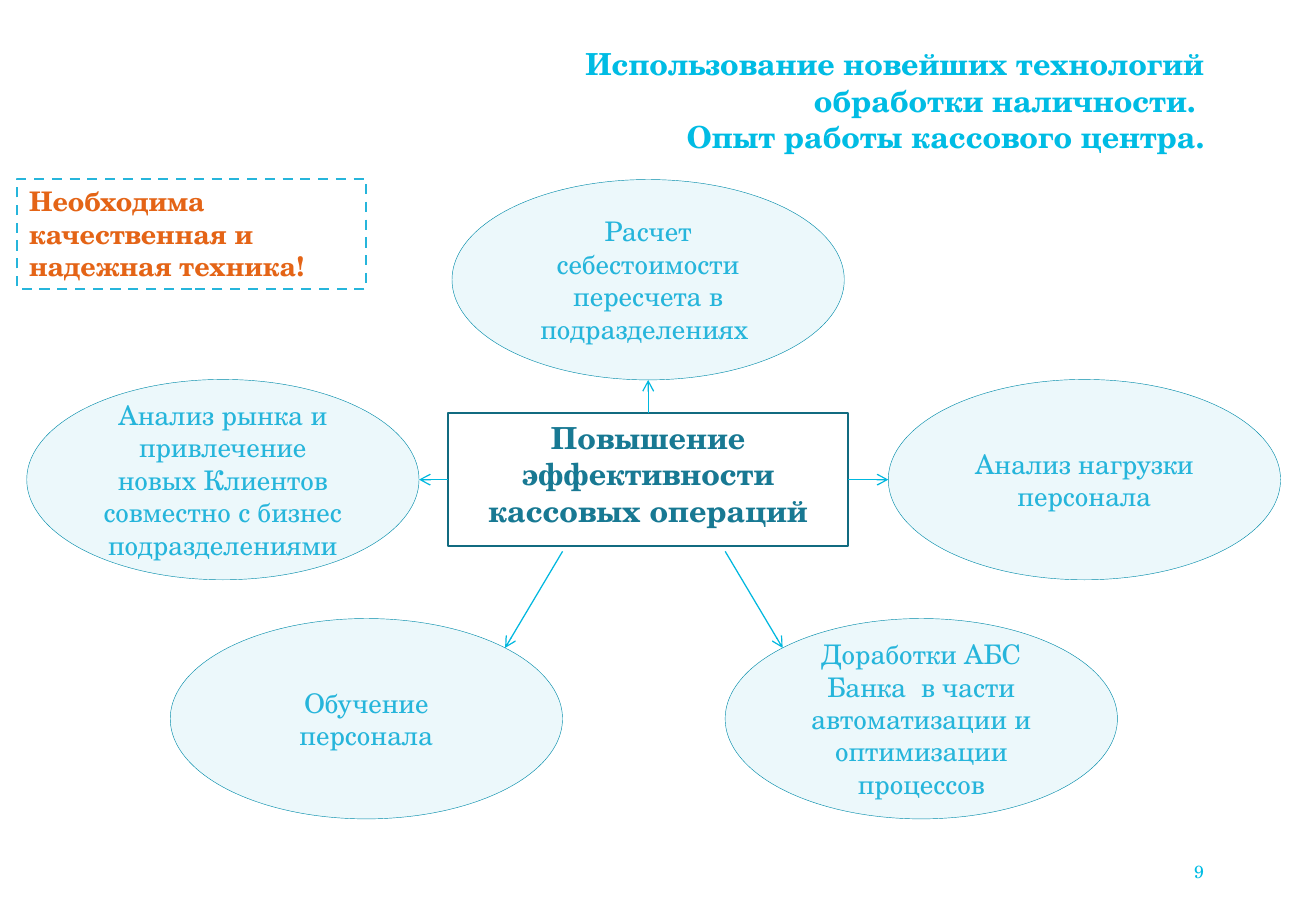
from copy import deepcopy
from dataclasses import dataclass
from math import sqrt

from lxml import etree
from pptx import Presentation
from pptx.dml.color import RGBColor
from pptx.enum.dml import MSO_LINE
from pptx.enum.shapes import MSO_CONNECTOR, MSO_SHAPE
from pptx.enum.text import MSO_ANCHOR, MSO_AUTO_SIZE, PP_ALIGN
from pptx.oxml.ns import qn
from pptx.util import Cm, Pt

LEFT, MID, RIGHT = PP_ALIGN.LEFT, PP_ALIGN.CENTER, PP_ALIGN.RIGHT
TOP, CENTER = MSO_ANCHOR.TOP, MSO_ANCHOR.MIDDLE
OVAL, RECT = MSO_SHAPE.OVAL, MSO_SHAPE.RECTANGLE
STRAIGHT, DASH = MSO_CONNECTOR.STRAIGHT, MSO_LINE.DASH
FIT_NONE = MSO_AUTO_SIZE.NONE

# Content
TITLE = ("Использование новейших технологий обработки наличности. "
         "\vОпыт работы кассового центра.")
HUB = "Повышение эффективности кассовых операций"
NOTE = "Необходима качественная и надежная техника!"
PAGE = "9"
D = sqrt(0.5)
# Text, centre offset from the hub (cm), direction from oval centre to arrow
# tip, side of the hub where the arrow starts (None: below the hub)
NODES = [
    ("Расчет себестоимости пересчета в подразделениях ", (0, -4.18), (0, 1), 0),
    ("Анализ нагрузки персонала", (9.12, 0), (-1, 0), 3),
    ("Доработки АБС Банка  в части автоматизации и оптимизации процессов",
     (5.71, 5), (-D, -D), None),
    ("Обучение персонала", (-5.89, 5), (D, -D), None),
    ("Анализ рынка и привлечение новых Клиентов совместно с бизнес "
     "подразделениями", (-8.89, 0), (1, 0), 1),
]

# Layout in cm
HUB_X, HUB_Y, HUB_W, HUB_H = 13.55, 10.03, 8.36, 2.79
OVAL_W, OVAL_H = 8.2, 4.19
START_Y = 11.53


@dataclass
class Theme:
    font: str = "TeX Gyre Schola"
    title: str = "00BCE4"
    hub: str = "187993"
    frame: str = "116B80"
    node: str = "26B5DB"
    pale: str = "ECF8FB"
    rim: str = "008BA9"
    note: str = "E46416"
    arrow: str = "00B8DF"
    large: float = 18
    body: float = 16
    small: float = 10.5


T = Theme()


def place(shape, x, y, w, h):
    shape.left, shape.top, shape.width, shape.height = map(Cm, (x, y, w, h))


def edge(shape, color, width, dash=None):
    shape.line.color.rgb = RGBColor.from_string(color)
    shape.line.width = Pt(width)
    if dash:
        shape.line.dash_style = dash


def write(shape, text, size=T.body, color=T.node, bold=False, align=MID,
          anchor=CENTER):
    frame = shape.text_frame
    frame.text = text
    frame.word_wrap = True
    frame.auto_size = FIT_NONE
    frame.vertical_anchor = anchor
    para = frame.paragraphs[0]
    props = para._p.get_or_add_pPr()
    props.set("marL", "0")
    props.set("indent", "0")
    etree.SubElement(props, qn("a:buNone"))
    para.alignment = align
    para.space_before = Pt(0)
    for run in para.runs:
        font = run.font
        font.name, font.size, font.bold = T.font, Pt(size), bold
        font.color.rgb = RGBColor.from_string(color)
    # Line breaks take the format of the text around them
    for gap in para._p.findall(qn("a:br")):
        gap.append(deepcopy(para.runs[0]._r.rPr))


def draw_arrow(shapes, start, end, hub, side):
    line = shapes.add_connector(STRAIGHT, *map(Cm, start + end))
    if side is not None:
        line.begin_connect(hub, side)
    edge(line, T.arrow, 0.75)
    etree.SubElement(line.line._get_or_add_ln(), qn("a:tailEnd"), type="arrow")
    etree.SubElement(line._element.spPr, qn("a:effectLst"))


def draw_node(shapes, hub, text, shift, way, side):
    x, y = HUB_X + shift[0], HUB_Y + shift[1]
    oval = shapes.add_shape(OVAL, 0, 0, 0, 0)
    place(oval, x - OVAL_W / 2, y - OVAL_H / 2, OVAL_W, OVAL_H)
    oval.shadow.inherit = False
    oval.fill.solid()
    oval.fill.fore_color.rgb = RGBColor.from_string(T.pale)
    edge(oval, T.rim, 0.25)
    write(oval, text)
    # Slanted arrows start above the inner end of their oval
    inner = OVAL_W / 2 if way[0] > 0 else -OVAL_W / 2
    tip = (x + way[0] * OVAL_W / 2, y + way[1] * OVAL_H / 2)
    draw_arrow(shapes, (x + inner, START_Y), tip, hub, side)


def main():
    deck = Presentation()
    deck.slide_width, deck.slide_height = Cm(27.51), Cm(19.05)
    slide = deck.slides.add_slide(deck.slide_layouts[1])
    shapes = slide.shapes

    # Title
    place(shapes.title, 8.69, 0.89, 16.74, 2.41)
    write(shapes.title, TITLE, size=T.large, color=T.title, bold=True,
          align=RIGHT)

    # Hub
    hub = slide.placeholders[1]
    place(hub, HUB_X - HUB_W / 2, HUB_Y - HUB_H / 2, HUB_W, HUB_H)
    edge(hub, T.frame, 1)
    write(hub, HUB, size=T.large, color=T.hub, bold=True, anchor=TOP)

    # Ovals and arrows
    for node in NODES:
        draw_node(shapes, hub, *node)

    # Dashed note
    note = shapes.add_shape(RECT, 0, 0, 0, 0)
    place(note, 0.36, 3.74, 7.29, 2.31)
    note.shadow.inherit = False
    note.fill.background()
    edge(note, T.node, 1.5, DASH)
    write(note, NOTE, color=T.note, bold=True, align=LEFT, anchor=TOP)

    # Page number
    page = shapes.add_textbox(0, 0, 0, 0)
    place(page, 22.58, 17.91, 2.84, 0.61)
    write(page, PAGE, size=T.small, color=T.title, align=RIGHT)

    deck.save("out.pptx")


if __name__ == "__main__":
    main()
